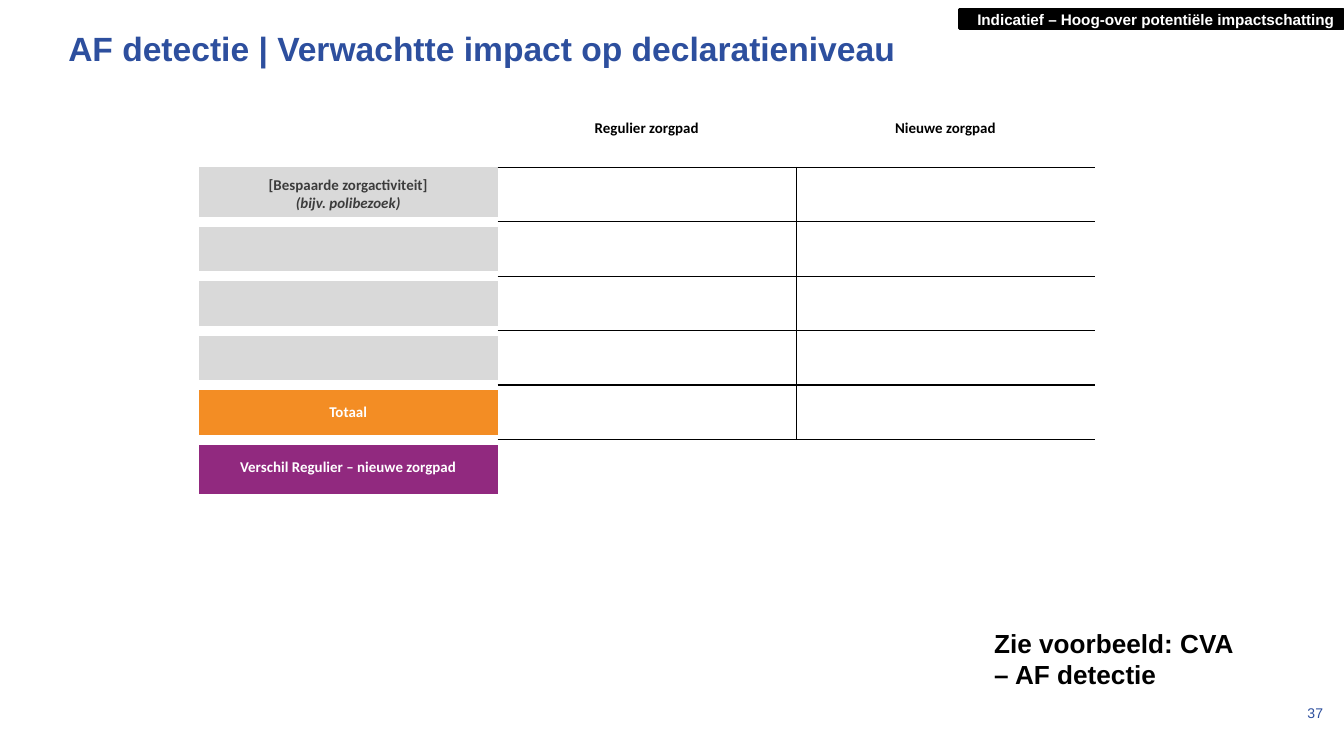
import pptx
import pptx.dml.color
import pptx.enum.shapes
import pptx.enum.text
import pptx.oxml
import pptx.oxml.ns
import pptx.util
from pptx.util import Cm

RGBColor = pptx.dml.color.RGBColor
ALIGN = pptx.enum.text.PP_ALIGN
ANCHOR = pptx.enum.text.MSO_ANCHOR

BLUE = RGBColor(0x2D, 0x4F, 0x9E)
BLACK = RGBColor(0x00, 0x00, 0x00)
WHITE = RGBColor(0xFF, 0xFF, 0xFF)
DARK_GREY = RGBColor(0x3C, 0x3C, 0x3C)
LIGHT_GREY = RGBColor(0xD9, 0xD9, 0xD9)
ORANGE = RGBColor(0xF3, 0x8D, 0x24)
PURPLE = RGBColor(0x91, 0x29, 0x7F)

COLUMNS = ["Regulier zorgpad", "Nieuwe zorgpad"]
# Row label lines, fill and text colour
ROWS = [
    (["[Bespaarde zorgactiviteit]", "(bijv. polibezoek)"], LIGHT_GREY, DARK_GREY),
    ([], LIGHT_GREY, DARK_GREY),
    ([], LIGHT_GREY, DARK_GREY),
    ([], LIGHT_GREY, DARK_GREY),
    (["Totaal"], ORANGE, WHITE),
    (["Verschil Regulier – nieuwe zorgpad"], PURPLE, WHITE),
]
# Weight in points of the rule below the header and each value row
RULES = [0.5, 0.5, 0.5, 0.5, 1, 1]
GAP = (WHITE, 6)
DIVIDER = (BLACK, 0.25)


def set_attrs(obj, values):
    for name, value in values.items():
        setattr(obj, name, value)


def write(tf, lines, size, color, font="Arial", bold=True, align=ALIGN.LEFT):
    """Fill a text frame with one paragraph per line."""
    for i, line in enumerate(lines):
        p = tf.add_paragraph() if i else tf.paragraphs[0]
        p.alignment = align
        r = p.add_run()
        r.text = line
        set_attrs(r.font, {"name": font, "size": pptx.util.Pt(size), "bold": bold})
        r.font.color.rgb = color


def set_borders(cell, **borders):
    """Draw the given sides (L, R, T, B) as (colour, points); clear the others."""
    tc_pr = cell._tc.get_or_add_tcPr()
    ns = pptx.oxml.ns.nsdecls("a")
    for side in "LRTB":
        color, weight = borders.get(side, (None, 0))
        paint = (f'<a:solidFill><a:srgbClr val="{color}"/></a:solidFill>'
                 if color is not None else "<a:noFill/>")
        width = int(pptx.util.Pt(weight))
        tc_pr.append(pptx.oxml.parse_xml(
            f'<a:ln{side} {ns} w="{width}">{paint}</a:ln{side}>'))


def add_title(s, box, text):
    sp = s.shapes.title
    set_attrs(sp, dict(zip(("left", "top", "width", "height"), box)))
    tf = sp.text_frame
    set_attrs(tf, {
        "margin_left": Cm(0.25), "margin_right": Cm(0.25),
        "margin_top": Cm(0.25), "margin_bottom": Cm(0.25),
        "vertical_anchor": ANCHOR.TOP, "word_wrap": True,
        "auto_size": pptx.enum.text.MSO_AUTO_SIZE.NONE,
    })
    write(tf, [text], 18, BLUE)


def add_banner(s, box, text):
    sp = s.shapes.add_shape(pptx.enum.shapes.MSO_SHAPE.RECTANGLE, *box)
    sp.shadow.inherit = False
    sp.fill.solid()
    sp.fill.fore_color.rgb = BLACK
    sp.line.color.rgb = BLACK
    sp.line.width = pptx.util.Pt(1.5)
    tf = sp.text_frame
    set_attrs(tf, {
        "margin_left": Cm(0.18), "margin_right": Cm(0.18),
        "margin_top": Cm(0.18), "margin_bottom": Cm(0.18),
        "vertical_anchor": ANCHOR.MIDDLE, "word_wrap": False,
    })
    write(tf, [text], 8.2, WHITE, align=ALIGN.RIGHT)
    tf.paragraphs[0].line_spacing = 1.06


def add_text(s, box, text, size, color, bold, anchor):
    tf = s.shapes.add_textbox(*box).text_frame
    set_attrs(tf, {"word_wrap": True, "vertical_anchor": anchor})
    write(tf, [text], size, color, bold=bold)


def add_impact_table(s, box):
    last = len(ROWS)
    table = s.shapes.add_table(last + 1, len(COLUMNS) + 1, *box).table
    set_attrs(table, {"first_row": False, "horz_banding": False})
    for row in table.rows:
        row.height = int(box[3] / (last + 1))

    # Header row
    set_borders(table.cell(0, 0))
    for c, heading in enumerate(COLUMNS, 1):
        cell = table.cell(0, c)
        write(cell.text_frame, [heading], 8, BLACK, "Calibri", align=ALIGN.CENTER)
        set_borders(cell, B=(BLACK, RULES[0]))

    # Row labels, parted by thick white borders
    for r, (lines, fill, color) in enumerate(ROWS, 1):
        cell = table.cell(r, 0)
        cell.vertical_anchor = ANCHOR.MIDDLE
        write(cell.text_frame, lines, 8, color, "Calibri", align=ALIGN.CENTER)
        for p in cell.text_frame.paragraphs[1:]:
            p.runs[0].font.italic = True
        gaps = {}
        if r > 1:
            gaps["T"] = GAP
        if r < last:
            gaps["B"] = GAP
        set_borders(cell, **gaps)
        cell.fill.solid()
        cell.fill.fore_color.rgb = fill

    # Value cells, ruled in black
    for r in range(1, last):
        rules = {"T": (BLACK, RULES[r - 1]), "B": (BLACK, RULES[r])}
        set_borders(table.cell(r, 1), R=DIVIDER, **rules)
        set_borders(table.cell(r, 2), L=DIVIDER, **rules)

    # Difference spans both value columns
    table.cell(last, 1).merge(table.cell(last, 2))
    for c in (1, 2):
        set_borders(table.cell(last, c), T=(BLACK, RULES[-1]))

    # Unfilled cells; empty ones need no margins
    for cell in table.iter_cells():
        if not cell.text_frame.text:
            set_attrs(cell, {"margin_top": 0, "margin_bottom": 0})
    for r in range(last + 1):
        for c in range(len(COLUMNS) + 1):
            if r == 0 or c > 0:
                table.cell(r, c).fill.background()


def main():
    prs = pptx.Presentation()
    set_attrs(prs, {"slide_width": Cm(25.4), "slide_height": Cm(14.29)})
    s = prs.slides.add_slide(prs.slide_layouts[5])

    add_title(s, (Cm(1.04), Cm(0.28), Cm(23.32), Cm(1.27)),
              "AF detectie | Verwachtte impact op declaratieniveau")
    # Page number
    add_text(s, (Cm(24.46), Cm(13.18), Cm(0.99), Cm(0.58)),
             "37", 7.5, BLUE, False, ANCHOR.MIDDLE)
    add_banner(s, (Cm(18.14), Cm(0.18), Cm(7.26), Cm(0.36)),
               "Indicatief – Hoog-over potentiële impactschatting")
    add_impact_table(s, (Cm(3.76), Cm(2.13), Cm(16.93), Cm(7.21)))
    # Reference to the worked example
    add_text(s, (Cm(18.54), Cm(11.73), Cm(5.05), Cm(1.45)),
             "Zie voorbeeld: CVA – AF detectie", 14, BLACK, True, ANCHOR.TOP)

    prs.save("out.pptx")


if __name__ == "__main__":
    main()
